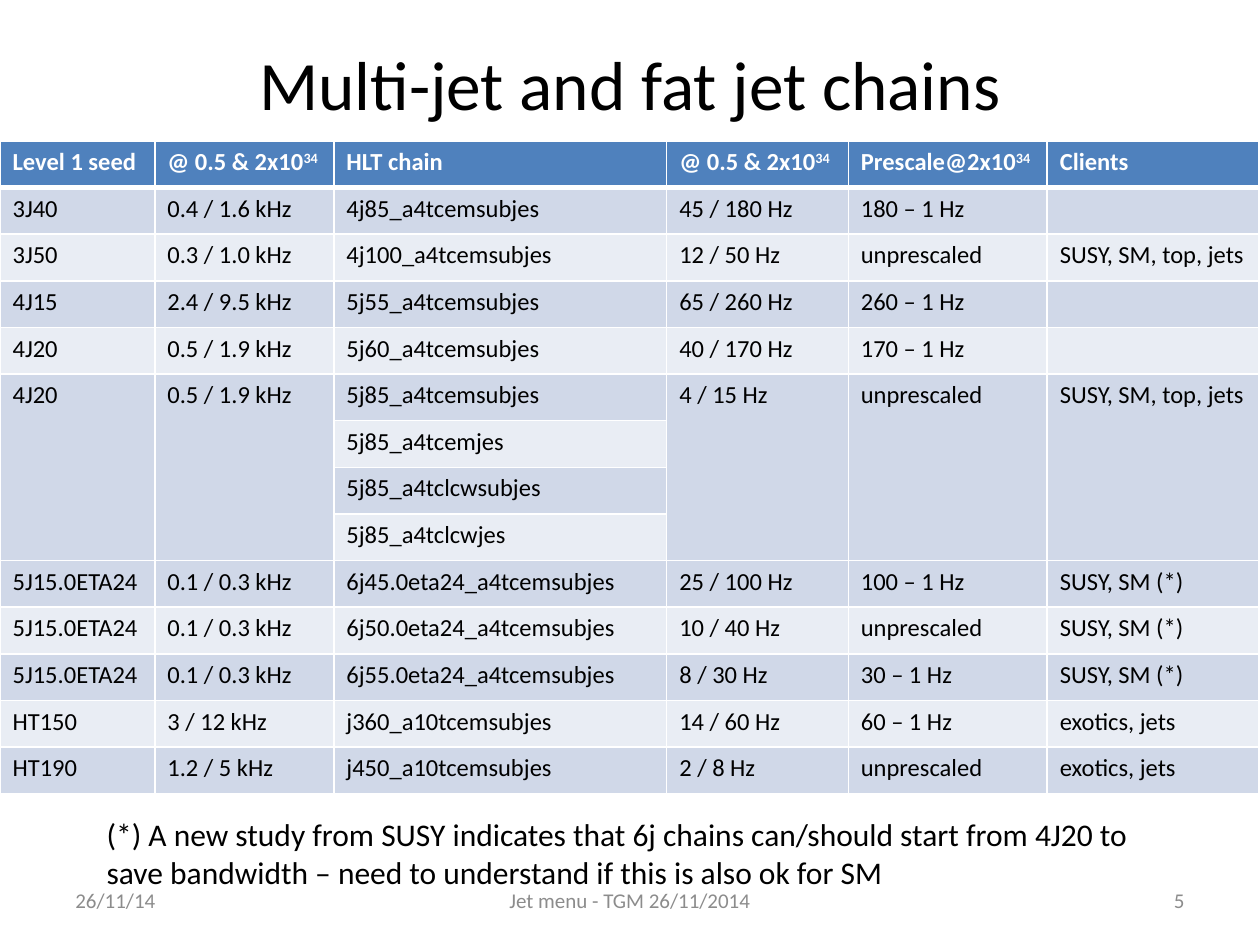
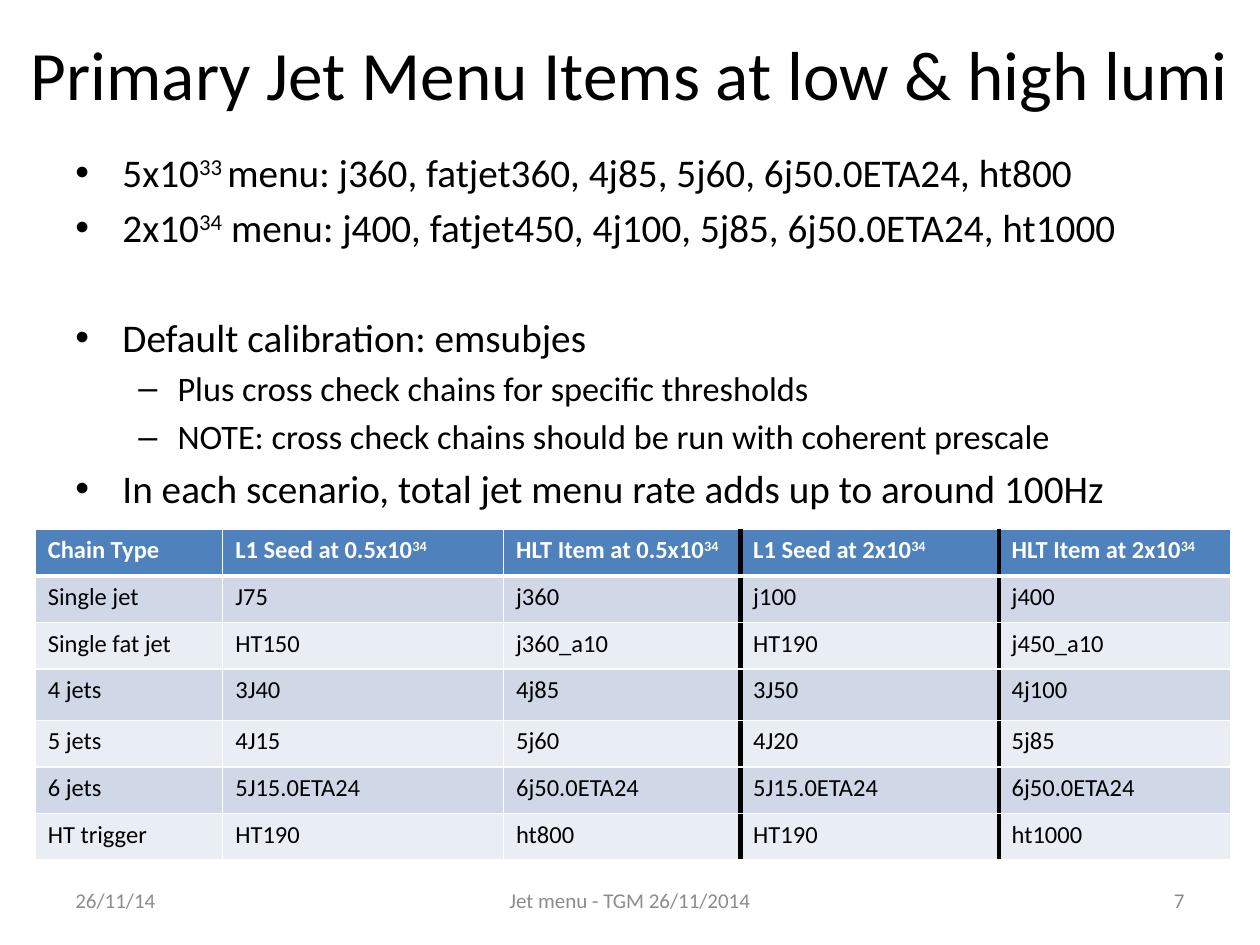
import lxml.etree
import pptx
import pptx.dml.color
import pptx.enum.text
import pptx.oxml.ns
import pptx.util

Cm, Pt = pptx.util.Cm, pptx.util.Pt
RGBColor = pptx.dml.color.RGBColor
ALIGN = pptx.enum.text.PP_ALIGN
ANCHOR = pptx.enum.text.MSO_ANCHOR
qn = pptx.oxml.ns.qn

BLACK = RGBColor(0x00, 0x00, 0x00)
WHITE = RGBColor(0xFF, 0xFF, 0xFF)
GREY = RGBColor(0x8C, 0x8C, 0x8C)
HEADER_BLUE = RGBColor(0x4F, 0x81, 0xBD)
BANDS = (RGBColor(0xD0, 0xD8, 0xE8), RGBColor(0xE9, 0xED, 0xF4))

TITLE = {"size": Pt(39.6), "color": BLACK}
NOTE = {"size": Pt(18), "color": BLACK}
FOOTER = {"size": Pt(12), "color": GREY}
HEADER = {"size": Pt(14), "color": WHITE, "bold": True}
CELL = {"size": Pt(14), "color": BLACK, "bold": False}
LEVELS = (
    {"bullet": "•", "indent": 0.95, "hang": 0.95,
     "font": {"size": Pt(22.4), "color": BLACK}},
    {"bullet": "–", "indent": 2.06, "hang": 0.79,
     "font": {"size": Pt(19.6), "color": BLACK}},
)

DATE = "26/11/14"
TALK = "Jet menu - TGM 26/11/2014"

CHAINS = {
    "title": "Multi-jet and fat jet chains",
    "title_box": (1.27, 0.76, 22.86, 1.8),
    "number": "5",
    "table_at": (0, 2.84),
    "widths": (3.12, 3.61, 6.71, 3.66, 4.01, 4.27),
    "heights": [0.94] * 14,
    "thick_after": (),
    "rows": [
        ("Level 1 seed", "@ 0.5 & 2x10^34^", "HLT chain", "@ 0.5 & 2x10^34^",
         "Prescale@2x10^34^", "Clients"),
        ("3J40", "0.4 / 1.6 kHz", "4j85_a4tcemsubjes", "45 / 180 Hz", "180 – 1 Hz", ""),
        ("3J50", "0.3 / 1.0 kHz", "4j100_a4tcemsubjes", "12 / 50 Hz", "unprescaled",
         "SUSY, SM, top, jets"),
        ("4J15", "2.4 / 9.5 kHz", "5j55_a4tcemsubjes", "65 / 260 Hz", "260 – 1 Hz", ""),
        ("4J20", "0.5 / 1.9 kHz", "5j60_a4tcemsubjes", "40 / 170 Hz", "170 – 1 Hz", ""),
        ("4J20", "0.5 / 1.9 kHz", "5j85_a4tcemsubjes", "4 / 15 Hz", "unprescaled",
         "SUSY, SM, top, jets"),
        (None, None, "5j85_a4tcemjes", None, None, None),
        (None, None, "5j85_a4tclcwsubjes", None, None, None),
        (None, None, "5j85_a4tclcwjes", None, None, None),
        ("5J15.0ETA24", "0.1 / 0.3 kHz", "6j45.0eta24_a4tcemsubjes", "25 / 100 Hz",
         "100 – 1 Hz", "SUSY, SM (*)"),
        ("5J15.0ETA24", "0.1 / 0.3 kHz", "6j50.0eta24_a4tcemsubjes", "10 / 40 Hz",
         "unprescaled", "SUSY, SM (*)"),
        ("5J15.0ETA24", "0.1 / 0.3 kHz", "6j55.0eta24_a4tcemsubjes", "8 / 30 Hz",
         "30 – 1 Hz", "SUSY, SM (*)"),
        ("HT150", "3 / 12 kHz", "j360_a10tcemsubjes", "14 / 60 Hz", "60 – 1 Hz",
         "exotics, jets"),
        ("HT190", "1.2 / 5 kHz", "j450_a10tcemsubjes", "2 / 8 Hz", "unprescaled",
         "exotics, jets"),
    ],
}
FOOTNOTE = ("(*) A new study from SUSY indicates that 6j chains can/should start from 4J20 "
            "to save bandwidth – need to understand if this is also ok for SM")

MENU = {
    "title": "Primary Jet Menu Items at low & high lumi",
    "title_box": (0, 0.41, 25.4, 2.11),
    "number": "7",
    "table_at": (0.71, 10.67),
    "widths": (3.78, 5.66, 4.78, 5.21, 4.67),
    "heights": [0.94] * 3 + [1.03] + [0.94] * 3,
    "thick_after": (2, 3),
    "rows": [
        ("Chain Type", "L1 Seed at 0.5x10^34^", "HLT Item at 0.5x10^34^",
         "L1 Seed at 2x10^34^", "HLT Item at 2x10^34^"),
        ("Single jet", "J75", "j360", "j100", "j400"),
        ("Single fat jet", "HT150", "j360_a10", "HT190", "j450_a10"),
        ("4 jets", "3J40", "4j85", "3J50", "4j100"),
        ("5 jets", "4J15", "5j60", "4J20", "5j85"),
        ("6 jets", "5J15.0ETA24", "6j50.0ETA24", "5J15.0ETA24", "6j50.0ETA24"),
        ("HT trigger", "HT190", "ht800", "HT190", "ht1000"),
    ],
}
MENU_POINTS = [
    (0, 0, "5x10^33 ^menu: j360, fatjet360, 4j85, 5j60, 6j50.0ETA24, ht800"),
    (0, 4.5, "2x10^34^ menu: j400, fatjet450, 4j100, 5j85, 6j50.0ETA24, ht1000"),
    (0, 36, "Default calibration: emsubjes"),
    (1, 4, "Plus cross check chains for specific thresholds"),
    (1, 4, "NOTE: cross check chains should be run with coherent prescale"),
    (0, 4.5, "In each scenario, total jet menu rate adds up to around 100Hz"),
]


def write(p, text, fmt):
    for i, part in enumerate(text.split("^")):
        if not part:
            continue
        r = p.add_run()
        r.text = part
        r.font.name = "Calibri"
        for name, value in fmt.items():
            if name == "color":
                r.font.color.rgb = value
            else:
                setattr(r.font, name, value)
        if i % 2:
            r.font._element.set("baseline", "30000")
    if not text:
        end = lxml.etree.SubElement(p._p, qn("a:endParaRPr"))
        end.set("sz", str(int(fmt["size"].pt * 100)))


def add_box(s, box, anchor=ANCHOR.TOP):
    tf = s.shapes.add_textbox(*map(Cm, box)).text_frame
    tf.word_wrap = True
    tf.vertical_anchor = anchor
    return tf


def add_line(s, box, text, fmt, align=ALIGN.LEFT, anchor=ANCHOR.MIDDLE):
    p = add_box(s, box, anchor).paragraphs[0]
    p.alignment = align
    write(p, text, fmt)


def add_points(s, box, points):
    tf = add_box(s, box)
    for i, (level, before, text) in enumerate(points):
        style = LEVELS[level]
        p = tf.paragraphs[0] if i == 0 else tf.add_paragraph()
        p.level = level
        p.space_before = Pt(before)
        pPr = p._p.get_or_add_pPr()
        pPr.set("marL", str(Cm(style["indent"])))
        pPr.set("indent", str(-Cm(style["hang"])))
        lxml.etree.SubElement(pPr, qn("a:buFont")).set("typeface", "Arial")
        lxml.etree.SubElement(pPr, qn("a:buChar")).set("char", style["bullet"])
        write(p, text, style["font"])


def set_border(cell, side, color, width):
    ln = lxml.etree.SubElement(cell._tc.get_or_add_tcPr(), qn("a:ln" + side))
    ln.set("w", str(Pt(width)))
    fill = lxml.etree.SubElement(ln, qn("a:solidFill"))
    lxml.etree.SubElement(fill, qn("a:srgbClr")).set("val", str(color))


def add_grid(s, content):
    rows, widths, heights = content["rows"], content["widths"], content["heights"]
    thick = content["thick_after"]
    left, top = content["table_at"]
    size = map(Cm, (left, top, sum(widths), sum(heights)))
    table = s.shapes.add_table(len(rows), len(widths), *size).table
    for column, width in zip(table.columns, widths):
        column.width = Cm(width)
    for row, height in zip(table.rows, heights):
        row.height = Cm(height)
    for i, row in enumerate(rows):
        for j, text in enumerate(row):
            cell = table.cell(i, j)
            borders = {
                "L": (BLACK, 3) if j - 1 in thick else (WHITE, 1),
                "R": (BLACK, 3) if j in thick else (WHITE, 1),
                "T": (WHITE, 3 if i == 1 else 1),
                "B": (WHITE, 3 if i == 0 else 1),
            }
            for side, (color, width) in borders.items():
                set_border(cell, side, color, width)
            cell.fill.solid()
            cell.fill.fore_color.rgb = BANDS[(i - 1) % 2] if i else HEADER_BLUE
            write(cell.text_frame.paragraphs[0], text or "", CELL if i else HEADER)
    for j in range(len(widths)):
        for i in range(1, len(rows)):
            if rows[i][j] is None and rows[i - 1][j] is not None:
                last = i
                while last + 1 < len(rows) and rows[last + 1][j] is None:
                    last += 1
                table.cell(i - 1, j).merge(table.cell(last, j))


def add_slide(prs, content):
    s = prs.slides.add_slide(prs.slide_layouts[6])
    add_line(s, content["title_box"], content["title"], TITLE, ALIGN.CENTER)
    add_grid(s, content)
    for left, width, text, align in (
        (1.27, 5.93, DATE, ALIGN.LEFT),
        (8.68, 8.04, TALK, ALIGN.CENTER),
        (18.2, 5.93, content["number"], ALIGN.RIGHT),
    ):
        add_line(s, (left, 17.65, width, 1.01), text, FOOTER, align)
    return s


def main():
    prs = pptx.Presentation()
    prs.slide_width, prs.slide_height = Cm(25.4), Cm(19.05)
    s = add_slide(prs, CHAINS)
    add_line(s, (1.9, 16.31, 21.82, 1.8), FOOTNOTE, NOTE, anchor=ANCHOR.TOP)
    s = add_slide(prs, MENU)
    add_points(s, (1.27, 2.87, 22.86, 7.62), MENU_POINTS)
    prs.save("out.pptx")


if __name__ == "__main__":
    main()
